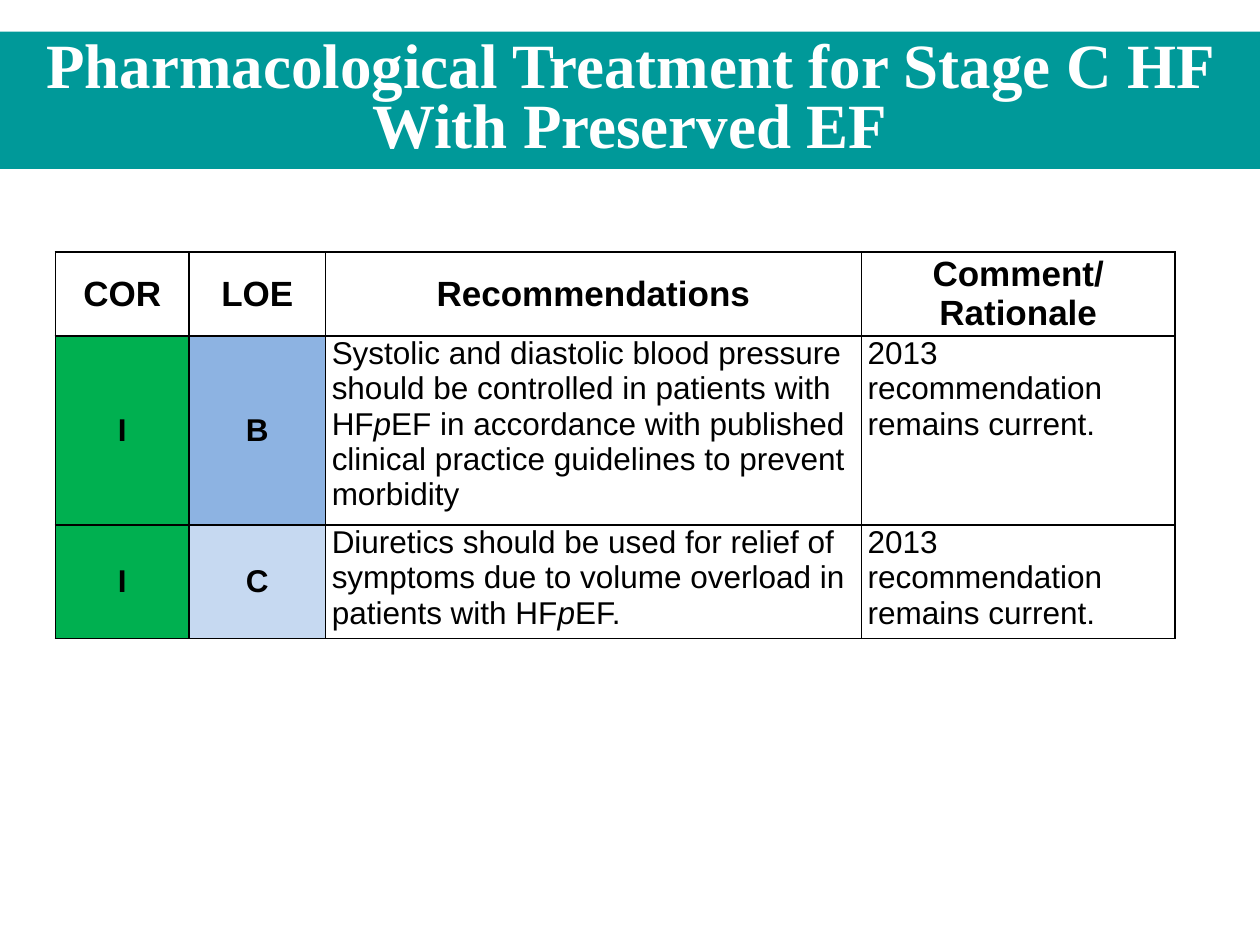
from pptx import Presentation
from pptx.dml.color import RGBColor
from pptx.enum.shapes import MSO_SHAPE
from pptx.enum.text import MSO_ANCHOR, PP_ALIGN
from pptx.oxml import parse_xml
from pptx.oxml.ns import nsdecls
from pptx.util import Pt

RECT = MSO_SHAPE.RECTANGLE
TOP, MIDDLE = MSO_ANCHOR.TOP, MSO_ANCHOR.MIDDLE
LEFT, CENTER = PP_ALIGN.LEFT, PP_ALIGN.CENTER
WIDTHS = [76.5, 77.9, 306.2, 179.4]
EDGE = 31.6


def color(code):
    return RGBColor.from_string(code)


def grid(top, heights, rows, fills, size, inset):
    """Add a bordered table; "*" in a text switches italics on or off."""
    frame = slide.shapes.add_table(len(rows), len(WIDTHS), Pt(EDGE), Pt(top),
                                   Pt(sum(WIDTHS)), Pt(sum(heights)))
    table = frame.table
    table.first_row = table.horz_banding = False
    for col, width in zip(table.columns, WIDTHS):
        col.width = Pt(width)
    for r, row in enumerate(rows):
        table.rows[r].height = Pt(heights[r])
        for c, text in enumerate(row):
            cell = table.cell(r, c)
            cell.margin_left = cell.margin_right = Pt(inset)
            cell.margin_top = cell.margin_bottom = 0
            head = len(rows) == 1 or c < 2
            cell.vertical_anchor = MIDDLE if head else TOP

            # Borders come before the fill
            props = cell._tc.get_or_add_tcPr()
            for side in "LRTB":
                props.append(parse_xml(
                    f'<a:ln{side} {nsdecls("a")} w="12700"><a:solidFill>'
                    f'<a:srgbClr val="000000"/></a:solidFill></a:ln{side}>'))
            if fills[r][c]:
                cell.fill.solid()
                cell.fill.fore_color.rgb = color(fills[r][c])
            else:
                cell.fill.background()

            # Text
            cell.text_frame.text = text.replace("*", "") if "\n" in text else ""
            if "\n" not in text:
                for i, part in enumerate(text.split("*")):
                    run = cell.text_frame.paragraphs[0].add_run()
                    run.text = part
                    run.font.italic = i % 2 == 1
            for para in cell.text_frame.paragraphs:
                para.alignment = CENTER if head else LEFT
                for run in para.runs:
                    run.font.name = "Arial"
                    run.font.size = Pt(size)
                    run.font.bold = head
                    run.font.color.rgb = color("000000")


deck = Presentation()
deck.slide_width, deck.slide_height = Pt(720), Pt(540)
slide = deck.slides.add_slide(deck.slide_layouts[6])

# Title band
band = slide.shapes.add_shape(RECT, 0, Pt(18), Pt(720), Pt(78.5))
band.shadow.inherit = False
band.fill.solid()
band.fill.fore_color.rgb = color("009999")
band.line.fill.background()
band.text_frame.word_wrap = True
band.text_frame.vertical_anchor = MIDDLE
band.text_frame.text = "Pharmacological Treatment for Stage C HF With Preserved EF"
title = band.text_frame.paragraphs[0]
title.alignment = CENTER
title.line_spacing = 0.8
font = title.runs[0].font
font.name, font.size, font.bold = "Times New Roman", Pt(36), True
font.color.rgb = color("FFFFFF")

# Recommendations
note = "2013 recommendation remains current."
grid(192, [108, 64.8], [
    ["I", "B", "Systolic and diastolic blood pressure should be controlled in "
     "patients with HF*p*EF in accordance with published clinical practice "
     "guidelines to prevent morbidity", note],
    ["I", "C", "Diuretics should be used for relief of symptoms due to volume "
     "overload in patients with HF*p*EF.", note],
], [["00B050", "8DB3E2", None, None], ["00B050", "C6D9F1", None, None]], 18, 3.6)

# Header
grid(144, [48], [["COR", "LOE", "Recommendations", "Comment/\nRationale"]],
     [[None] * 4], 20, 5)

deck.save("out.pptx")
